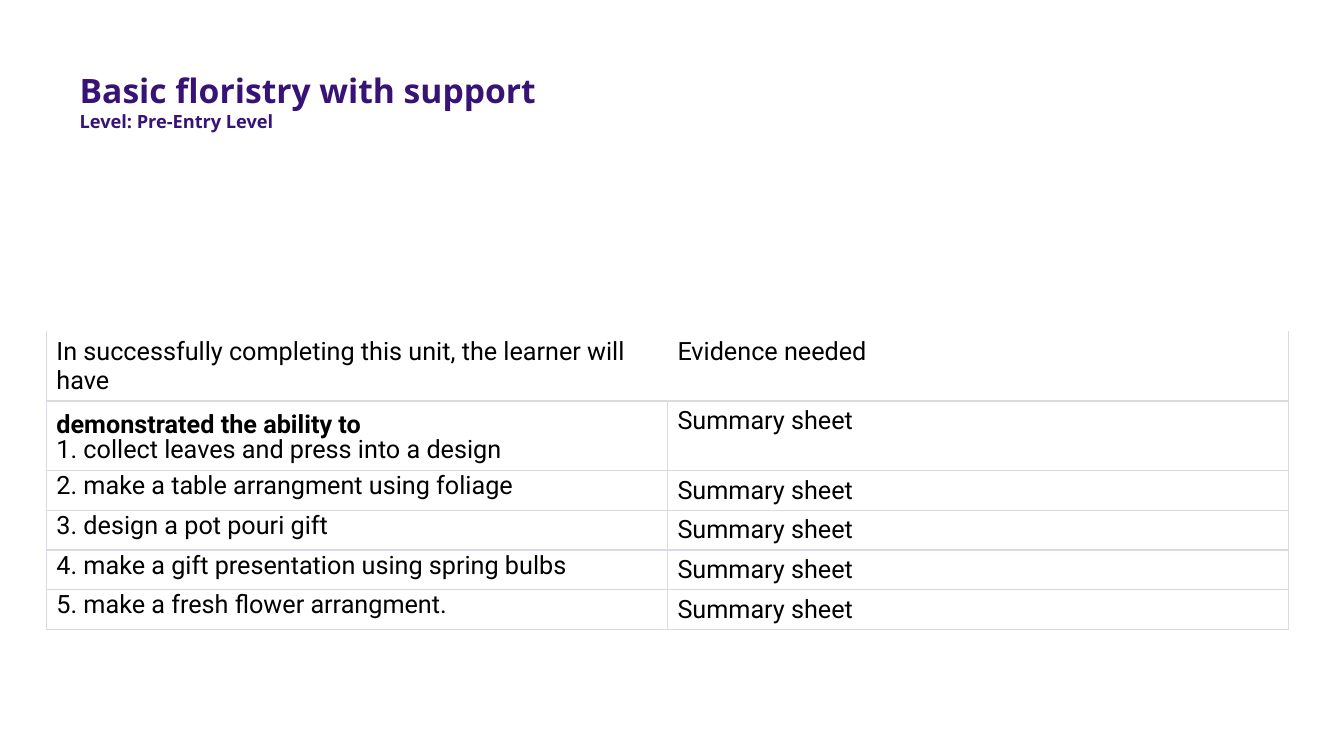
from dataclasses import dataclass

from lxml import etree
from pptx import Presentation
from pptx.dml.color import RGBColor
from pptx.enum.text import MSO_ANCHOR, MSO_AUTO_SIZE, PP_ALIGN
from pptx.oxml.ns import qn
from pptx.util import Inches, Pt

TOP = MSO_ANCHOR.TOP
LEFT = PP_ALIGN.LEFT
NO_AUTOFIT = MSO_AUTO_SIZE.NONE
TITLE_ONLY = 5


@dataclass(frozen=True)
class Theme:
    heading_font: str = "Open Sans"
    body_font: str = "Roboto"
    purple: str = "371376"
    black: str = "000000"
    white: str = "FFFFFF"
    rule: str = "DCD8E5"
    title_size: int = 24
    level_size: int = 13
    body_size: int = 18
    rule_width: float = 1.2
    blank_width: float = 1


THEME = Theme()

HEADING = [("Basic floristry with support", THEME.title_size),
           ("Level: Pre-Entry Level", THEME.level_size)]
HEADER = ["In successfully completing this unit, the learner will have", "Evidence needed"]
LEAD_IN = "demonstrated the ability to"
SKILLS = [
    "1. collect leaves and press into a design",
    "2. make a table arrangment using foliage",
    "3. design a pot pouri gift",
    "4. make a gift presentation using spring bulbs",
    "5. make a fresh flower arrangment.",
]
EVIDENCE = "Summary sheet"
ROW_HEIGHTS = [0.69, 0.69] + [0.39] * 4
COLUMN_WIDTH = 6.16


def set_values(target, values):
    for name, value in values.items():
        setattr(target, name, value)


def write_paragraph(para, text, font, size, color, bold=False, line_spacing=None):
    para.alignment = LEFT
    para.line_spacing = line_spacing
    span = para.add_run()
    span.text = text
    set_values(span.font, {"name": font, "size": Pt(size), "bold": bold})
    span.font.color.rgb = RGBColor.from_string(color)


def add_heading(page):
    title = page.shapes.title
    set_values(title, {"left": Inches(0.79), "top": Inches(0.69),
                       "width": Inches(11.75), "height": Inches(0.72)})
    frame = title.text_frame
    set_values(frame, {"margin_left": 0, "margin_right": 0, "margin_top": 0,
                       "margin_bottom": 0, "vertical_anchor": TOP,
                       "word_wrap": True, "auto_size": NO_AUTOFIT})
    for index, (text, size) in enumerate(HEADING):
        para = frame.add_paragraph() if index else frame.paragraphs[0]
        para.space_before = Pt(0)
        write_paragraph(para, text, THEME.heading_font, size, THEME.purple, True, 1.0)


def set_borders(cell, blank_sides):
    """Rule all four sides of a cell, in white on the blank sides."""
    properties = cell._tc.get_or_add_tcPr()
    for index, side in enumerate("LRTB"):
        blank = side in blank_sides
        width = THEME.blank_width if blank else THEME.rule_width
        line = etree.Element(qn(f"a:ln{side}"), w=str(Pt(width)))
        fill = etree.SubElement(line, qn("a:solidFill"))
        etree.SubElement(fill, qn("a:srgbClr"), val=THEME.white if blank else THEME.rule)
        properties.insert(index, line)


def fill_cell(cell, lines, blank_sides=""):
    """Write (text, bold, line spacing) lines into a cell."""
    cell.fill.background()
    cell.vertical_anchor = TOP
    set_borders(cell, blank_sides)
    frame = cell.text_frame
    for index, (text, bold, spacing) in enumerate(lines):
        para = frame.add_paragraph() if index else frame.paragraphs[0]
        write_paragraph(para, text, THEME.body_font, THEME.body_size, THEME.black,
                        bold, spacing)


def add_evidence_table(page):
    frame = page.shapes.add_table(len(ROW_HEIGHTS), len(HEADER), Inches(0.46), Inches(3.29),
                                  Inches(COLUMN_WIDTH * 2), Inches(sum(ROW_HEIGHTS)))
    table = frame.table
    set_values(table, {"first_row": False, "horz_banding": False})
    for column in table.columns:
        column.width = Inches(COLUMN_WIDTH)
    for row, height in zip(table.rows, ROW_HEIGHTS):
        row.height = Inches(height)
    for column, (text, blank_sides) in enumerate(zip(HEADER, ("TR", "TL"))):
        fill_cell(table.cell(0, column), [(text, False, None)], blank_sides)
    for row, skill in enumerate(SKILLS, start=1):
        lead = [(LEAD_IN, True, Pt(24))] if row == 1 else []
        fill_cell(table.cell(row, 0), lead + [(skill, False, Pt(18))])
        fill_cell(table.cell(row, 1), [(EVIDENCE, False, None)])


def main():
    deck = Presentation()
    set_values(deck, {"slide_width": Inches(13.33), "slide_height": Inches(7.5)})
    page = deck.slides.add_slide(deck.slide_layouts[TITLE_ONLY])
    add_heading(page)
    add_evidence_table(page)
    deck.save("out.pptx")


if __name__ == "__main__":
    main()
